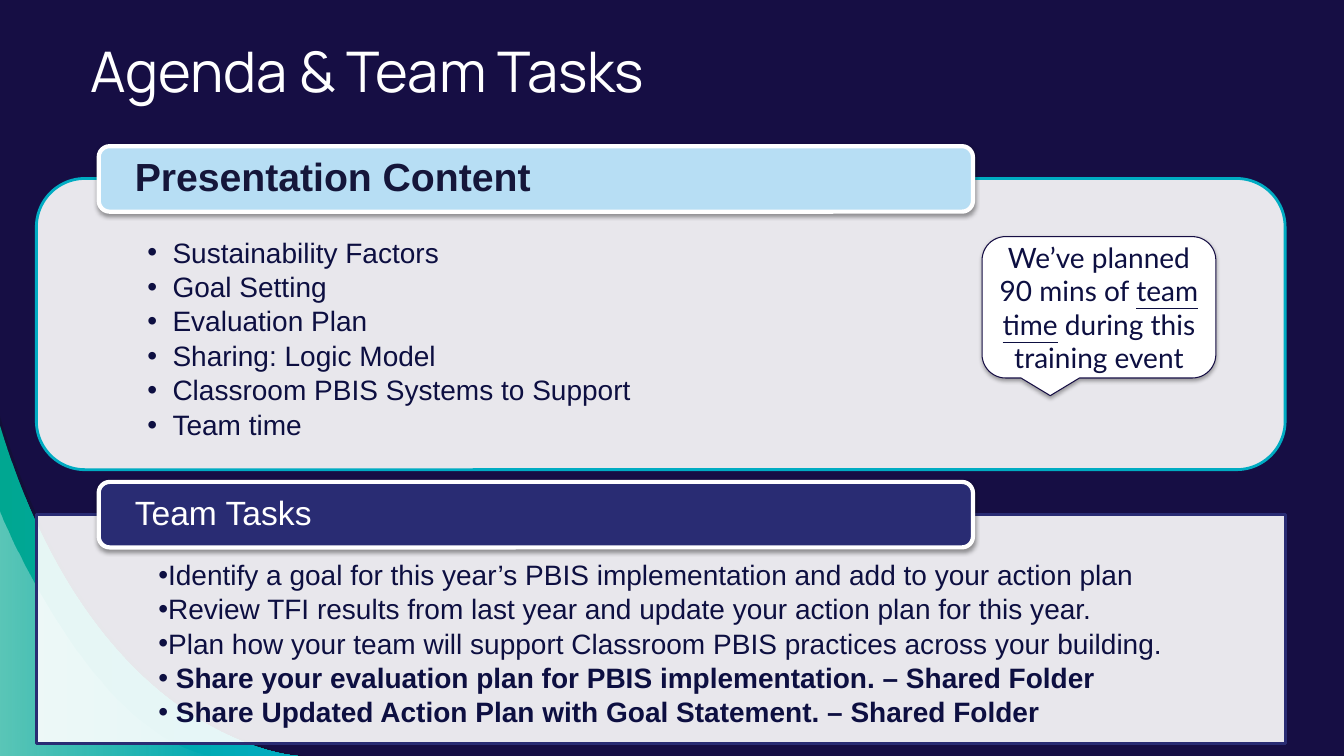
from lxml.etree import SubElement
from pptx import Presentation
from pptx.dml.color import RGBColor
from pptx.enum.shapes import MSO_SHAPE
from pptx.enum.text import MSO_ANCHOR, PP_ALIGN
from pptx.oxml.ns import qn
from pptx.util import Pt

NIGHT = RGBColor(0x16, 0x0E, 0x44)
DUSK = RGBColor(0x12, 0x10, 0x2F)
INK = RGBColor(0x0D, 0x0F, 0x41)
DARK = RGBColor(0x15, 0x16, 0x3A)
NAVY = RGBColor(0x29, 0x2C, 0x73)
SKY = RGBColor(0xB7, 0xDE, 0xF4)
AQUA = RGBColor(0x00, 0xAC, 0xC2)
GREEN = RGBColor(0x00, 0xA7, 0x91)
WHITE = RGBColor(0xFF, 0xFF, 0xFF)

TOPICS = [
    "Sustainability Factors",
    "Goal Setting",
    "Evaluation Plan",
    "Sharing: Logic Model",
    "Classroom PBIS Systems to Support",
    "Team time",
]
TASKS = [
    "Identify a goal for this year’s PBIS implementation and add to your action plan",
    "Review TFI results from last year and update your action plan for this year.",
    "Plan how your team will support Classroom PBIS practices across your building.",
]
SHARES = [
    " Share your evaluation plan for PBIS implementation. – Shared Folder",
    " Share Updated Action Plan with Goal Statement. – Shared Folder",
]


def write(frame, text, size=20, color=INK, font="Arial", bold=False, under="",
          align=PP_ALIGN.LEFT, lines=None, after=0, bullet=False, left=0, hang=0):
    """Add one paragraph; the words in `under` are underlined."""
    para = frame.paragraphs[0]
    if para.runs:
        para = frame.add_paragraph()
    para.alignment = align
    para.space_after = Pt(after)
    if lines:
        para.line_spacing = lines
    if bullet:
        props = para._p.get_or_add_pPr()
        props.set("marL", str(Pt(left)))
        props.set("indent", str(Pt(-hang)))
        SubElement(props, qn("a:buFont"), typeface="Arial")
        SubElement(props, qn("a:buChar"), char="•")
    for part in text.partition(under) if under else [text]:
        run = para.add_run()
        run.text = part
        run.font.name = font
        run.font.size = Pt(size)
        run.font.bold = bold
        run.font.underline = bool(under) and part == under
        run.font.color.rgb = color


class Deck:
    def __init__(self):
        self.prs = Presentation()
        self.prs.slide_width, self.prs.slide_height = Pt(960), Pt(540)
        self.slide = self.prs.slides.add_slide(self.prs.slide_layouts[6])
        back = self.slide.background.fill
        back.solid()
        back.fore_color.rgb = NIGHT

    def fade(self, shape, *levels):
        """Set the opacity, in percent, of each fill colour in turn."""
        colors = shape._element.spPr.iter(qn("a:srgbClr"))
        for color, level in zip(colors, levels):
            SubElement(color, qn("a:alpha"), val=str(level * 1000))

    def shade(self, shape, level):
        """Drop a soft shadow straight down."""
        effects = shape._element.spPr.find(qn("a:effectLst"))
        drop = SubElement(effects, qn("a:outerShdw"), blurRad=str(Pt(3.1)),
                          dist=str(Pt(1.6)), dir="5400000", rotWithShape="0")
        black = SubElement(drop, qn("a:srgbClr"), val="000000")
        SubElement(black, qn("a:alpha"), val=str(level * 1000))

    def inset(self, frame, left, top, right, bottom):
        frame.word_wrap = True
        frame.margin_left, frame.margin_right = Pt(left), Pt(right)
        frame.margin_top, frame.margin_bottom = Pt(top), Pt(bottom)

    def box(self, kind, left, top, width, height, fill, line, weight):
        shape = self.slide.shapes.add_shape(
            kind, Pt(left), Pt(top), Pt(width), Pt(height))
        shape.shadow.inherit = False
        shape.fill.solid()
        shape.fill.fore_color.rgb = fill
        shape.line.color.rgb = line
        shape.line.width = Pt(weight)
        return shape

    def wave(self, points, colors, levels):
        """A corner swoosh: a Bezier curve closed through the bottom left."""
        dots = [(Pt(x), Pt(y)) for x, y in [*points, (0, 540)]]
        form = self.slide.shapes.build_freeform(*dots[0])
        form.add_line_segments(dots[1:], close=True)
        shape = form.convert_to_shape()
        shape.shadow.inherit = False
        shape.line.fill.background()

        # Bend the first three segments into one curve
        legs = list(shape._element.spPr.iter(qn("a:lnTo")))[:3]
        outline = legs[0].getparent()
        bend = SubElement(outline, qn("a:cubicBezTo"))
        outline.replace(legs[0], bend)
        for leg in legs:
            bend.append(leg[0])
        for leg in legs[1:]:
            outline.remove(leg)

        if len(colors) == 1:
            shape.fill.solid()
            shape.fill.fore_color.rgb = colors[0]
        else:
            shape.fill.gradient()
            shape.fill.gradient_angle = 0
            for stop, color in zip(shape.fill.gradient_stops, colors):
                stop.color.rgb = color
        self.fade(shape, *levels)

    def panel(self, kind, top, height, line):
        shape = self.box(kind, 26, top, 892, height, WHITE, line, 2)
        self.fade(shape, 90)
        frame = shape.text_frame
        frame.vertical_anchor = MSO_ANCHOR.TOP
        self.inset(frame, 69.1, 33, 69.1, 11.5)
        return frame

    def items(self, frame, texts, **style):
        for text in texts:
            write(frame, text, lines=0.9, after=3, bullet=True, left=18, **style)

    def header(self, text, top, fill, **style):
        shape = self.box(MSO_SHAPE.ROUNDED_RECTANGLE, 70.5, top, 624.5, 46.8,
                         fill, WHITE, 3)
        self.shade(shape, 38)
        frame = shape.text_frame
        frame.vertical_anchor = MSO_ANCHOR.MIDDLE
        self.inset(frame, 23.5, 0, 23.5, 0)
        write(frame, text, lines=0.9, **style)

    def title(self, text):
        shape = self.slide.shapes.add_textbox(Pt(57.5), Pt(17), Pt(796), Pt(66))
        frame = shape.text_frame
        frame.vertical_anchor = MSO_ANCHOR.MIDDLE
        self.inset(frame, 7.2, 7.2, 7.2, 7.2)
        write(frame, text, size=40, color=WHITE, font="Manrope")

    def callout(self, text, under):
        shape = self.box(MSO_SHAPE.ROUNDED_RECTANGULAR_CALLOUT, 701.5, 169,
                         167, 101, WHITE, NIGHT, 0.75)
        self.shade(shape, 35)
        frame = shape.text_frame
        frame.vertical_anchor = MSO_ANCHOR.MIDDLE
        self.inset(frame, 7.2, 3.6, 7.2, 3.6)
        write(frame, text, font="Lato", under=under, align=PP_ALIGN.CENTER)


def main():
    deck = Deck()

    # Corner waves
    deck.wave([(0, 297.5), (70.5, 532), (218, 540), (218, 540)], [DUSK], [54])
    deck.wave([(0, 304), (68.5, 532), (212.5, 540), (212.5, 540)],
              [GREEN, AQUA], [])
    deck.wave([(0, 364.5), (0, 364.5), (65.5, 529), (155.5, 540)],
              [WHITE, WHITE], [36, 0])

    # Presentation content
    topics = deck.panel(MSO_SHAPE.ROUNDED_RECTANGLE, 127.5, 208, AQUA)
    deck.items(topics, TOPICS, hang=18)
    deck.header("Presentation Content", 104.4, SKY, size=28, color=DARK, bold=True)

    # Team tasks
    tasks = deck.panel(MSO_SHAPE.RECTANGLE, 367.7, 163.5, NAVY)
    deck.items(tasks, TASKS)
    deck.items(tasks, SHARES, bold=True)
    deck.header("Team Tasks", 344.2, NAVY, size=24, color=WHITE)

    # Title and note
    deck.title("Agenda & Team Tasks")
    deck.callout("We’ve planned 90 mins of team time during this training event",
                 under="team time")

    deck.prs.save("out.pptx")


if __name__ == "__main__":
    main()
